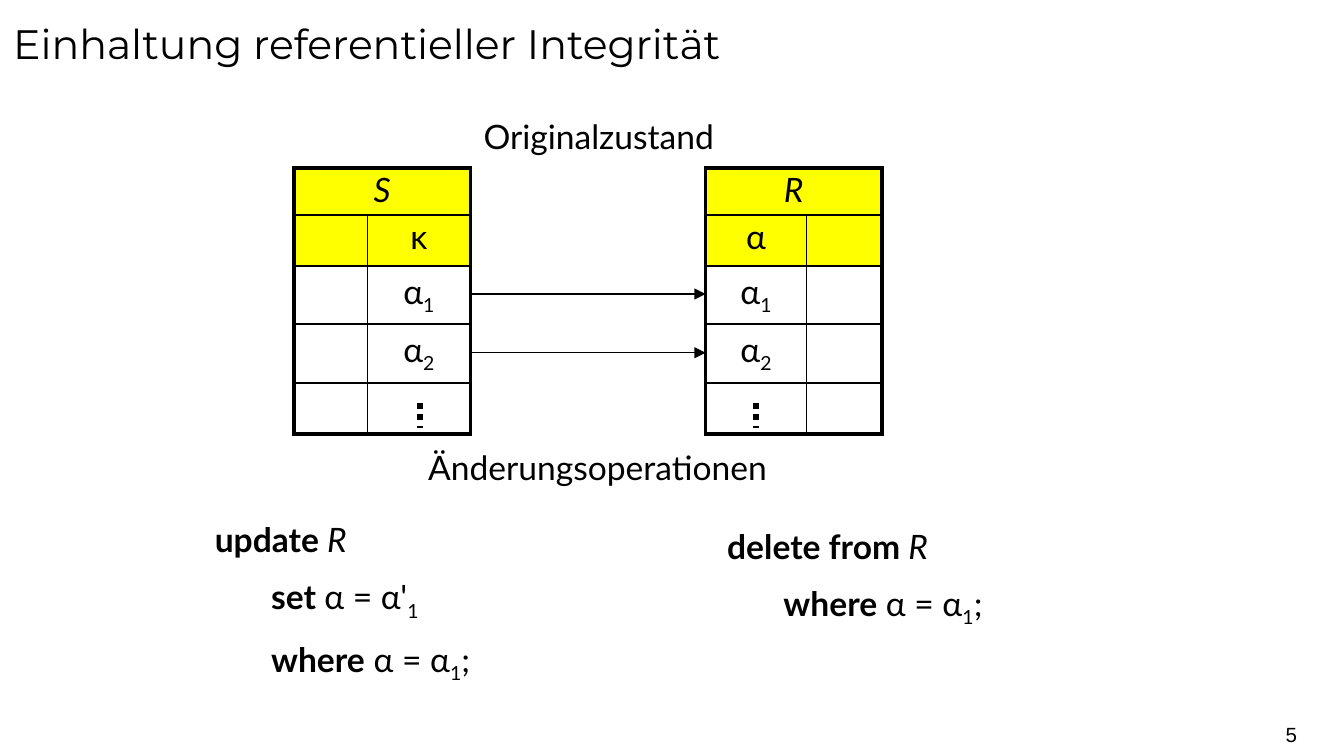
"""Build the slide on referential integrity: two linked tables and two change operations."""
from lxml.etree import SubElement
from pptx import Presentation
from pptx.dml.color import RGBColor as RGB
from pptx.enum.dml import MSO_LINE
from pptx.enum.shapes import MSO_CONNECTOR
from pptx.enum.text import MSO_ANCHOR, PP_ALIGN
from pptx.oxml.ns import qn
from pptx.util import Inches, Pt

COLORS = {"ink": "000000", "head": "FFFF00"}
INK = RGB.from_string(COLORS["ink"])
HEAD = RGB.from_string(COLORS["head"])

prs = Presentation()
U = Inches(10) // 160
prs.slide_width, prs.slide_height = 160 * U, 90 * U
s = prs.slides.add_slide(prs.slide_layouts[6])


def write(p, runs, font="Lato", size=18):
    for text, style in runs:
        r = p.add_run()
        r.text = text
        r.font.name, r.font.size = font, Pt(size)
        r.font.color.rgb = INK
        r.font.bold, r.font.italic = style == "b", style == "i"
        if style == "sub":
            r.font._element.set("baseline", "-25000")


def line(x1, y1, x2, y2, width):
    c = s.shapes.add_connector(MSO_CONNECTOR.STRAIGHT, *[int(v * U) for v in (x1, y1, x2, y2)])
    c.line.color.rgb, c.line.width = INK, Pt(width)
    SubElement(c._element.spPr, qn("a:effectLst"))
    return c


texts = [
    (0, 0, 160, 15, "Montserrat", 22, [[("Einhaltung referentieller Integrität", "")]]),
    (56, 13, 31, 6.4, "Lato", 18, [[("Originalzustand", "")]]),
    (49.4, 52.4, 49, 6.4, "Lato", 18, [[("Änderungsoperationen", "")]]),
    (24, 61, 51, 21, "Lato", 18, [
        [("update ", "b"), ("R", "i")],
        [("set ", "b"), ("α = α'", ""), ("1", "sub")],
        [("where", "b"), (" α = α", ""), ("1", "sub"), (";", "")]]),
    (85, 61.8, 51, 13.75, "Lato", 18, [
        [("delete from ", "b"), ("R", "i")],
        [("where", "b"), (" α = α", ""), ("1", "sub"), (";", "")]]),
    (118.6, 85, 35.8, 4.8, "Arial", 11, [[("5", "")]]),
]
for x, y, w, h, font, size, paragraphs in texts:
    tf = s.shapes.add_textbox(*[int(v * U) for v in (x, y, w, h)]).text_frame
    tf.word_wrap = True
    for i, runs in enumerate(paragraphs):
        p = tf.add_paragraph() if i else tf.paragraphs[0]
        if i:
            p.space_before = Pt(9)
            p._p.get_or_add_pPr().set("marL", str(int(6.7 * U)))
        if font == "Montserrat":
            p.line_spacing = 1.25
        if font == "Arial":
            p.alignment = PP_ALIGN.RIGHT
            tf.vertical_anchor = MSO_ANCHOR.MIDDLE
            tf.margin_left = tf.margin_right = 0
        write(p, runs, font, size)

rows = [5.55, 6.05, 6.9, 7, 5.5]
tables = [(35, [8.75, 12.25], 1, "S", "κ"), (84, [12, 9], 0, "R", "α")]
for x, cols, key, name, attribute in tables:
    t = s.shapes.add_table(5, 2, x * U, 20 * U, 21 * U, 31 * U).table
    t.first_row = t.horz_banding = False
    for i, w in enumerate(cols):
        t.columns[i].width = int(w * U)
    for i, h in enumerate(rows):
        t.rows[i].height = int(h * U)
    t.cell(0, 0).merge(t.cell(0, 1))
    content = {
        (0, 0): [(name, "i")],
        (1, key): [(attribute, "")],
        (2, key): [("α", ""), ("1", "sub")],
        (3, key): [("α", ""), ("2", "sub")],
    }
    for row in range(5):
        for col in range(2):
            cell = t.cell(row, col)
            outer = {"L": col == 0, "R": col == 1 or row == 0, "T": row == 0, "B": row == 4}
            for side, thick in outer.items():
                ln = SubElement(cell._tc.get_or_add_tcPr(), qn(f"a:ln{side}"),
                                w=str(Pt(2.25 if thick else 1)))
                fill = SubElement(ln, qn("a:solidFill"))
                SubElement(fill, qn("a:srgbClr"), val=COLORS["ink"])
            if row < 2:
                cell.fill.solid()
                cell.fill.fore_color.rgb = HEAD
            else:
                cell.fill.background()
            cell.margin_left = cell.margin_right = 0
            cell.margin_top = cell.margin_bottom = Inches(0.04)
            p = cell.text_frame.paragraphs[0]
            p.line_spacing = 0.9
            p.alignment = PP_ALIGN.CENTER
            if (row, col) in content:
                write(p, content[row, col])
            else:
                end = SubElement(p._p, qn("a:endParaRPr"), sz="1800")
                SubElement(end, qn("a:latin"), typeface="Lato")

for x in (50, 90):
    line(x, 48, x, 51, 3).line.dash_style = MSO_LINE.ROUND_DOT
for y in (35, 42):
    arrow = line(56, y, 84, y, 0.75)
    SubElement(arrow.line._get_or_add_ln(), qn("a:tailEnd"), type="triangle")

prs.save("out.pptx")
